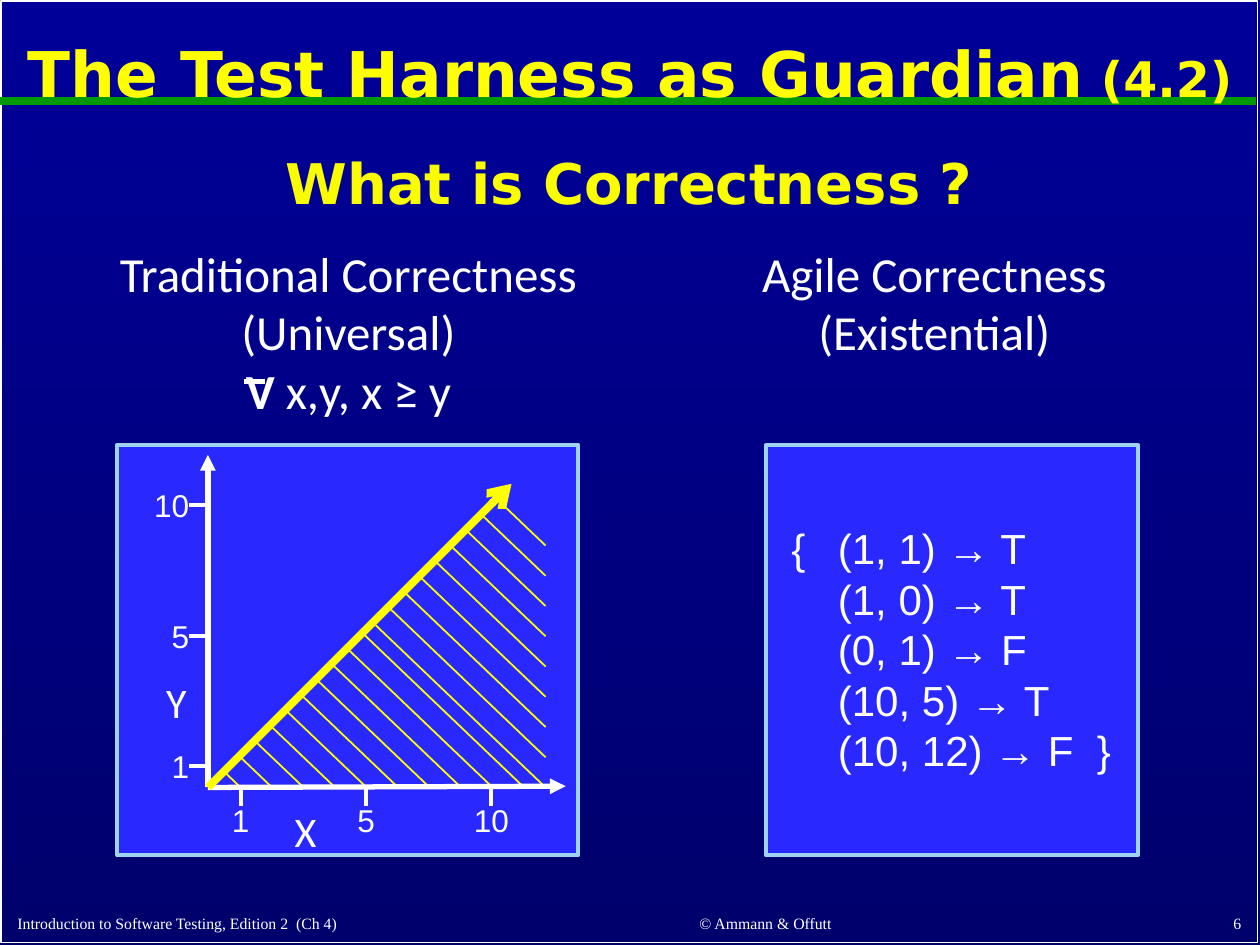
from lxml import etree
from pptx import Presentation
from pptx.dml.color import RGBColor
from pptx.enum.shapes import MSO_CONNECTOR, MSO_SHAPE
from pptx.enum.text import MSO_ANCHOR, PP_ALIGN
from pptx.oxml.ns import qn
from pptx.util import Inches, Pt

STRAIGHT = MSO_CONNECTOR.STRAIGHT
RECTANGLE = MSO_SHAPE.RECTANGLE
LEFT, CENTER, RIGHT = PP_ALIGN.LEFT, PP_ALIGN.CENTER, PP_ALIGN.RIGHT
TOP, MIDDLE, BOTTOM = MSO_ANCHOR.TOP, MSO_ANCHOR.MIDDLE, MSO_ANCHOR.BOTTOM

WHITE = RGBColor(0xFF, 0xFF, 0xFF)
YELLOW = RGBColor(0xFF, 0xFF, 0x00)
SOFT_YELLOW = RGBColor(0xFA, 0xFD, 0x00)
GREEN = RGBColor(0x00, 0x99, 0x00)
PANEL_BLUE = RGBColor(0x29, 0x29, 0xFF)
PANEL_EDGE = RGBColor(0x9D, 0xD5, 0xF1)
GRADIENT = (RGBColor(0x00, 0x00, 0x99), RGBColor(0x00, 0x00, 0x6D))

WIDTH, HEIGHT = 10, 7.5
PANEL_TOP, PANEL_HEIGHT = 3.53, 3.26


def text_style(name, size, color=WHITE, bold=False):
    return {"name": name, "size": Pt(size), "bold": bold, "color": color}


TITLE = text_style("DejaVu Sans", 36, YELLOW, True)
SECTION = text_style("DejaVu Sans", 32, SOFT_YELLOW, True)
HEADING = text_style("Calibri", 28)
AXIS_NAME = text_style("Calibri", 24)
TICK_LABEL = text_style("Arial", 18)
PAIR = text_style("Arial", 24)
FOOTER = text_style("Times New Roman", 9)


def add_run(paragraph, text, style, **changes):
    run = paragraph.add_run()
    run.text = text
    for name, value in {**style, **changes}.items():
        if name == "color":
            run.font.color.rgb = value
        else:
            setattr(run.font, name, value)


def add_text(slide, box, lines, style, alignment=CENTER, anchor=TOP):
    shape = slide.shapes.add_textbox(*map(Inches, box))
    frame = shape.text_frame
    frame.word_wrap = False
    frame.vertical_anchor = anchor
    for index, line in enumerate(lines):
        paragraph = frame.add_paragraph() if index else frame.paragraphs[0]
        paragraph.alignment = alignment
        add_run(paragraph, line, style)
    return frame


def add_line(slide, start, end, color, width, arrow=None):
    line = slide.shapes.add_connector(STRAIGHT, *map(Inches, (*start, *end)))
    line.line.color.rgb = color
    line.line.width = Pt(width)
    if arrow:
        etree.SubElement(line.line._get_or_add_ln(), qn("a:tailEnd"), type=arrow)
    etree.SubElement(line._element.spPr, qn("a:effectLst"))


def add_rectangle(slide, box, edge, width, fill=None):
    shape = slide.shapes.add_shape(RECTANGLE, *map(Inches, box))
    shape.shadow.inherit = False
    shape.line.color.rgb = edge
    shape.line.width = Pt(width)
    if fill is None:
        shape.fill.background()
    else:
        shape.fill.solid()
        shape.fill.fore_color.rgb = fill


def build_backdrop(slide):
    fill = slide.background.fill
    fill.gradient()
    fill.gradient_angle = 270
    for stop, color in zip(fill.gradient_stops, GRADIENT):
        stop.color.rgb = color
    add_rectangle(slide, (0.01, 0.01, WIDTH - 0.03, HEIGHT - 0.03), WHITE, 1)
    add_line(slide, (0, 0.8), (WIDTH - 0.03, 0.8), GREEN, 4.5)


def place(placeholder, box):
    for name, value in zip(("left", "top", "width", "height"), box):
        setattr(placeholder, name, Inches(value))
    placeholder.text_frame.word_wrap = True


def build_title(slide, box):
    title = slide.shapes.title
    place(title, box)
    title.text_frame.vertical_anchor = MIDDLE
    paragraph = title.text_frame.paragraphs[0]
    paragraph.alignment = CENTER
    paragraph.line_spacing = 0.9
    add_run(paragraph, "The Test Harness as Guardian", TITLE)
    add_run(paragraph, " (4.2)", TITLE, size=Pt(28))


def build_footer(slide, top, height):
    for left, width, text, alignment in (
        (0.04, 4.2, "Introduction to Software Testing, Edition 2  (Ch 4)", LEFT),
        (4.49, 3.17, "© Ammann & Offutt", CENTER),
        (7.87, 2.08, "6", RIGHT),
    ):
        add_text(slide, (left, top, width, height), [text], FOOTER, alignment, BOTTOM)


def build_universal_heading(slide, box):
    left, top = box[:2]
    frame = add_text(slide, box, ["Traditional Correctness", "(Universal)"], HEADING)
    paragraph = frame.add_paragraph()
    paragraph.alignment = CENTER
    add_run(paragraph, "V ", HEADING, bold=True)
    add_run(paragraph, "x,y, x ≥ y", HEADING)
    bar_left, bar_top = left + 1.16, top + 1.15
    add_line(slide, (bar_left, bar_top), (bar_left + 0.16, bar_top), WHITE, 3)


def build_hatching(slide, origin_x, origin_y, right):
    slope, gap = 0.955, 0.24
    bottom_ends = [(origin_x + 0.26 + 0.25 * step, origin_y) for step in range(10)]
    corner = [(right, origin_y)]
    right_ends = [(right, origin_y - gap * step) for step in range(1, 9)]
    for x, y in bottom_ends + corner + right_ends:
        run = ((x - origin_x) - (origin_y - y)) / (1 + slope)
        add_line(slide, (x, y), (x - run, y - slope * run), YELLOW, 1)


def build_graph(slide, box):
    left, top, width, height = box
    x, y = left + 0.72, top + height - 0.54
    add_rectangle(slide, box, PANEL_EDGE, 2.25, PANEL_BLUE)
    build_hatching(slide, x, y, x + 2.68)
    add_line(slide, (x, y), (x + 2.84, y - 0.01), WHITE, 3, "triangle")
    add_line(slide, (x, y), (x, y - 2.64), WHITE, 3, "triangle")
    for step, label in enumerate(("1", "5", "10")):
        tick_x = x + 0.26 + 0.995 * step
        tick_y = y - 0.17 - 1.035 * step
        add_line(slide, (tick_x, y - 0.01), (tick_x, y + 0.15), WHITE, 2.25)
        add_line(slide, (x, tick_y), (x - 0.15, tick_y), WHITE, 2.25)
        add_text(slide, (tick_x - 0.24, y + 0.06, 0.48, 0.4), [label], TICK_LABEL)
        add_text(slide, (x - 0.53, tick_y - 0.2, 0.48, 0.4), [label], TICK_LABEL, RIGHT)
    add_text(slide, (x + 0.59, y + 0.09, 0.31, 0.36), ["X"], AXIS_NAME)
    add_text(slide, (x - 0.43, y - 0.93, 0.29, 0.36), ["Y"], AXIS_NAME)
    add_line(slide, (x, y), (x + 2.41, y - 2.41), YELLOW, 4.5, "arrow")


def build_pairs(slide, box):
    left, top, width, height = box
    add_rectangle(slide, box, PANEL_EDGE, 2.25, PANEL_BLUE)
    body = slide.placeholders[1]
    place(body, (left + 0.1, top + 0.57, width - 0.2, 2.12))
    slide.shapes._spTree.append(body._element)
    frame = body.text_frame
    frame.vertical_anchor = TOP
    indent = Inches(0.37)
    pairs = ("{\t(1, 1) → T", "(1, 0) → T", "(0, 1) → F", "(10, 5) → T", "(10, 12) → F  }")
    for index, text in enumerate(pairs):
        paragraph = frame.add_paragraph() if index else frame.paragraphs[0]
        properties = paragraph._p.get_or_add_pPr()
        properties.set("marL", str(indent))
        properties.set("indent", str(0 if index else -indent))
        etree.SubElement(properties, qn("a:buNone"))
        paragraph.space_before = Pt(0)
        paragraph.alignment = LEFT
        add_run(paragraph, text, PAIR)


def main():
    presentation = Presentation()
    presentation.slide_width = Inches(WIDTH)
    presentation.slide_height = Inches(HEIGHT)
    slide = presentation.slides.add_slide(presentation.slide_layouts[1])
    build_backdrop(slide)
    build_title(slide, (0.05, 0.11, WIDTH - 0.1, 1))
    slide.shapes._spTree.append(slide.shapes.title._element)
    build_footer(slide, 7.17, 0.28)
    add_text(slide, (2.15, 1.13, 5.69, 0.64), ["What is Correctness ?"], SECTION)
    build_universal_heading(slide, (0.78, 1.88, 3.97, 1.51))
    add_text(slide, (5.88, 1.88, 3.07, 1.04), ["Agile Correctness", "(Existential)"], HEADING)
    build_graph(slide, (0.93, PANEL_TOP, 3.66, PANEL_HEIGHT))
    build_pairs(slide, (6.08, PANEL_TOP, 2.95, PANEL_HEIGHT))
    presentation.save("out.pptx")


if __name__ == "__main__":
    main()
